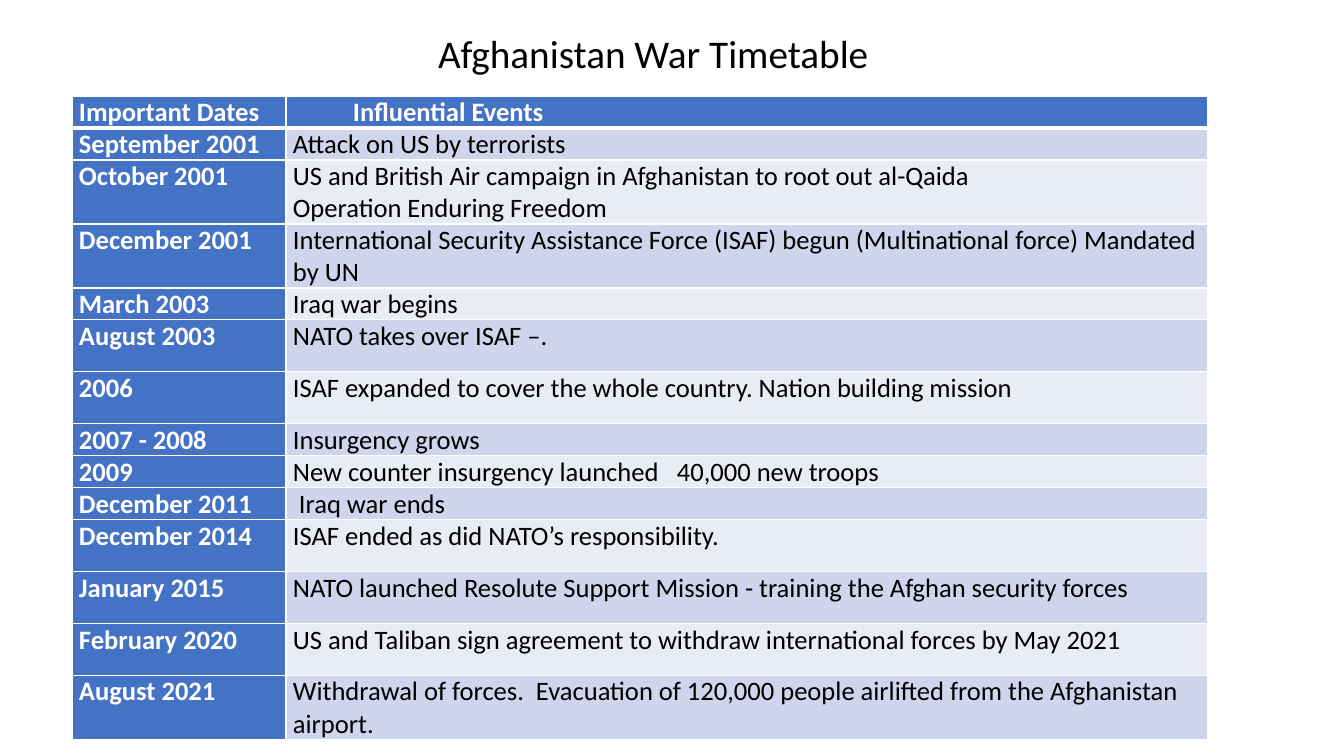
from lxml import etree
from pptx import Presentation
from pptx import util as u
from pptx.dml.color import RGBColor
from pptx.enum import text
from pptx.oxml import parse_xml
from pptx.oxml.ns import nsdecls, qn

SCALE = 914400 / 100.8


def px(length):
    return u.Emu(round(length * SCALE))


def style_font(font, color, **values):
    font.color.rgb = RGBColor.from_string(color)
    for name, value in values.items():
        setattr(font, name, value)


BLUE, WHITE, BLACK = "4472C4", "FFFFFF", "000000"
BANDS = ["E9EBF5", "CFD5EA"]

# date, event, row height, left indent of the event
timeline = [
    ("Important Dates", "Influential Events", 32, 60),
    ("September 2001", "Attack on US by terrorists", 32, 0),
    ("October 2001", "US and British Air campaign in Afghanistan to root out al-Qaida\n"
                     "Operation Enduring Freedom", 64, 0),
    ("December 2001", "International Security Assistance Force (ISAF) begun "
                      "(Multinational force) Mandated by UN", 64, 0),
    ("March 2003", "Iraq war begins", 32, 0),
    ("August 2003", "NATO takes over ISAF –.", 52, 0),
    ("2006", "ISAF expanded to cover the whole country. Nation building mission", 52, 0),
    ("2007 - 2008", "Insurgency grows", 32, 0),
    ("2009", "New counter insurgency launched\t40,000 new troops", 32, 0),
    ("December 2011", "Iraq war ends", 32, 6),
    ("December 2014", "ISAF ended as did NATO’s responsibility.", 52, 0),
    ("January 2015", "NATO launched Resolute Support Mission - training the Afghan "
                     "security forces", 52, 0),
    ("February 2020", "US and Taliban sign agreement to withdraw international forces "
                      "by May 2021", 52, 0),
    ("August 2021", "Withdrawal of forces.  Evacuation of 120,000 people airlifted from "
                    "the Afghanistan airport.", 64, 0),
]

prs = Presentation()
prs.slide_width, prs.slide_height = px(1344), px(756)
slide = prs.slides.add_slide(prs.slide_layouts[5])

title = slide.shapes.title
title.left, title.top, title.width, title.height = px(428), px(24), px(455), px(57)
title.text_frame.text = "Afghanistan War Timetable"
title_format = {"word_wrap": False, "vertical_anchor": text.MSO_ANCHOR.TOP,
                "auto_size": text.MSO_AUTO_SIZE.SHAPE_TO_FIT_TEXT}
for name, value in title_format.items():
    setattr(title.text_frame, name, value)
heading = title.text_frame.paragraphs[0]
heading.alignment = text.PP_ALIGN.LEFT
style_font(heading.font, BLACK, size=u.Pt(28), name="Calibri")

total_height = sum(height for _, _, height, _ in timeline)
table = slide.shapes.add_table(len(timeline), 2, px(72), px(96),
                               px(1136), px(total_height)).table
for column, width in zip(table.columns, (214, 922)):
    column.width = px(width)

cell_format = {"margin_left": px(7), "margin_right": px(7),
               "margin_top": 0, "margin_bottom": 0}
for row, (date, event, height, indent) in enumerate(timeline):
    table.rows[row].height = px(height)
    for col, content in enumerate((date, event)):
        cell = table.cell(row, col)
        cell.text = content
        for name, value in cell_format.items():
            setattr(cell, name, value)

        for side in ("lnL", "lnR", "lnT", "lnB"):
            header_rule = (row, side) in ((0, "lnB"), (1, "lnT"))
            border = etree.SubElement(cell._tc.tcPr, qn(f"a:{side}"),
                                      w=str(u.Pt(3 if header_rule else 1)))
            fill = etree.SubElement(border, qn("a:solidFill"))
            etree.SubElement(fill, qn("a:srgbClr"), val=WHITE)

        emphasised = row == 0 or col == 0
        cell.fill.solid()
        cell.fill.fore_color.rgb = RGBColor.from_string(
            BLUE if emphasised else BANDS[row % 2])
        for paragraph in cell.text_frame.paragraphs:
            properties = paragraph._p.get_or_add_pPr()
            if col == 1 and indent:
                properties.set("marL", str(px(indent)))
            if "\t" in content:
                properties.append(parse_xml(
                    f'<a:tabLst {nsdecls("a")}><a:tab pos="{px(384)}" algn="l"/></a:tabLst>'))
            for run in paragraph.runs:
                style_font(run.font, WHITE if emphasised else BLACK,
                           size=u.Pt(19), name="Calibri", bold=emphasised)

prs.save("out.pptx")
